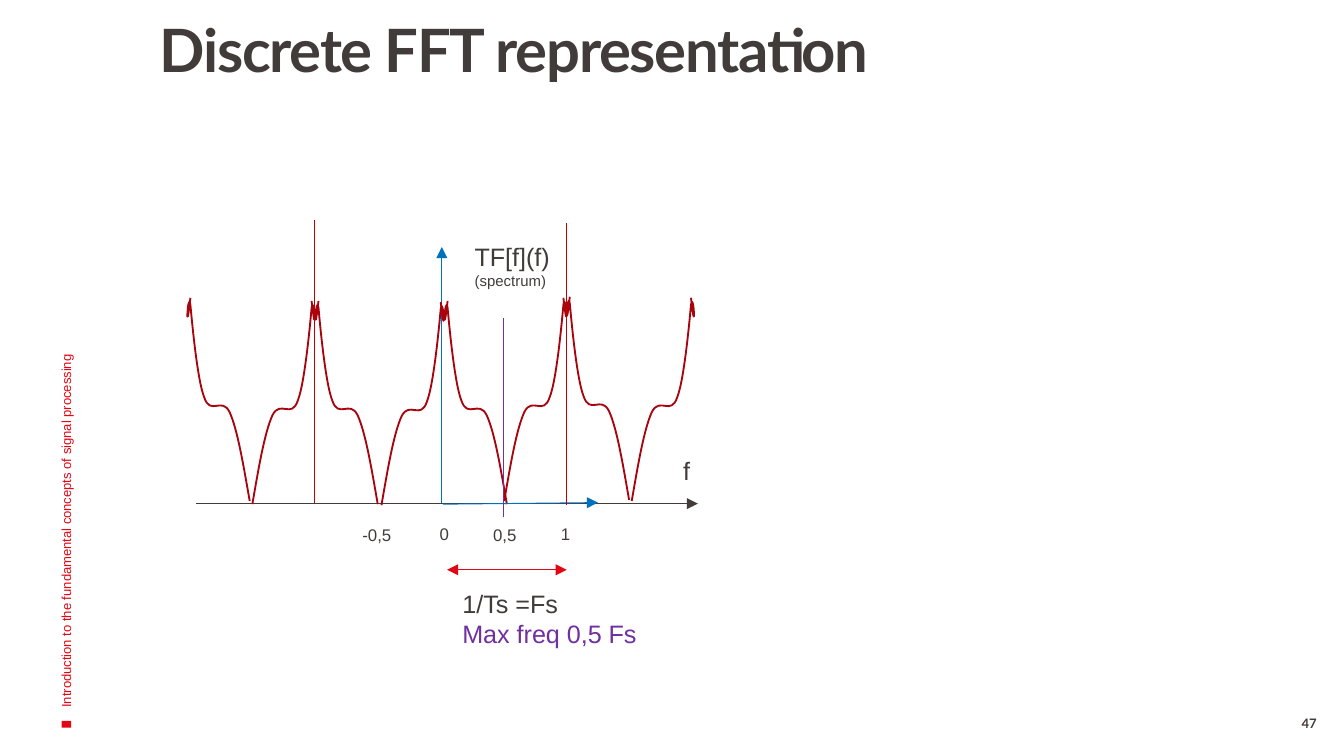
"""Build the slide on the periodic spectrum of the discrete FFT."""
from dataclasses import dataclass

from lxml.etree import SubElement
from pptx import Presentation
from pptx.dml.color import RGBColor as Rgb
from pptx.enum.shapes import MSO_CONNECTOR as Link, MSO_SHAPE as Preset
from pptx.enum.text import MSO_ANCHOR as Anchor, PP_ALIGN as Align
from pptx.oxml.ns import qn
from pptx.util import Cm, Pt


@dataclass(frozen=True)
class Theme:
    ink: str = "413C3A"
    brand: str = "E30613"
    blue: str = "0070C0"
    purple: str = "7030A0"
    period: str = "C00000"
    spectrum: str = "A8040E"
    heading: str = "Lato"
    body: str = "Arial"
    title: float = 32
    label: float = 13.5
    tick: float = 9
    caption: float = 8
    footer: float = 7
    thin: float = 0.5
    curve: float = 1


class SlideWriter:
    def __init__(self, slide, theme):
        self.shapes = slide.shapes
        self.theme = theme

    def text(self, box, lines, rotation=0, insets=(0.25, 0.13, 0.25, 0.13),
             anchor=Anchor.TOP, spacing=None, align=Align.LEFT, tracking=None):
        holder = self.shapes.add_textbox(*map(Cm, box))
        holder.rotation = rotation
        frame = holder.text_frame
        left, top, right, bottom = map(Cm, insets)
        frame_format = {"word_wrap": True, "vertical_anchor": anchor,
                        "margin_left": left, "margin_top": top,
                        "margin_right": right, "margin_bottom": bottom}
        for name, value in frame_format.items():
            setattr(frame, name, value)
        for index, (words, size, color, font) in enumerate(lines):
            paragraph = frame.add_paragraph() if index else frame.paragraphs[0]
            paragraph.alignment = align
            paragraph.line_spacing = spacing
            run = paragraph.add_run()
            run.text = words
            font_format = {"name": font, "size": Pt(size),
                           "bold": font == self.theme.heading}
            for name, value in font_format.items():
                setattr(run.font, name, value)
            run.font.color.rgb = Rgb.from_string(color)
            if tracking is not None:
                run._r.get_or_add_rPr().set("spc", str(tracking))

    def line(self, start, end, color, arrows=()):
        connector = self.shapes.add_connector(
            Link.STRAIGHT, *map(Cm, (*start, *end)))
        connector.line.color.rgb = Rgb.from_string(color)
        connector.line.width = Pt(self.theme.thin)
        outline = connector.line._get_or_add_ln()
        for arrow in arrows:
            SubElement(outline, qn(f"a:{arrow}"), type="triangle")
        SubElement(connector._element.spPr, qn("a:effectLst"))

    def curve(self, controls, color):
        corners = [(Cm(x), Cm(y)) for x, y in controls]
        builder = self.shapes.build_freeform(*corners[0])
        builder.add_line_segments(corners[1:], close=False)
        wave = builder.convert_to_shape()
        outline = wave._element.find(f".//{qn('a:path')}")
        segments = outline.findall(qn("a:lnTo"))
        for first in range(0, len(segments), 3):
            bezier = SubElement(outline, qn("a:cubicBezTo"))
            for segment in segments[first:first + 3]:
                bezier.append(segment[0])
                outline.remove(segment)
        wave.shadow.inherit = False
        wave.fill.background()
        wave.line.color.rgb = Rgb.from_string(color)
        wave.line.width = Pt(self.theme.curve)

    def marker(self, box, color, rotation):
        square = self.shapes.add_shape(Preset.RECTANGLE, *map(Cm, box))
        square.rotation = rotation
        square.shadow.inherit = False
        square.fill.solid()
        square.fill.fore_color.rgb = Rgb.from_string(color)
        square.line.fill.background()


HALF_PERIOD = [
    (0, 0), (0.12, -0.69), (0.23, -1.35), (0.38, -1.68),
    (0.53, -1.98), (0.74, -1.6), (0.86, -1.96),
    (0.99, -2.29), (1.09, -3.38), (1.12, -3.71),
    (1.17, -4.01), (1.22, -2.95), (1.12, -3.84)]


def main():
    deck = Presentation()
    deck.slide_width, deck.slide_height = Cm(25.4), Cm(14.29)
    theme = Theme()
    writer = SlideWriter(deck.slides.add_slide(deck.slide_layouts[6]), theme)

    writer.marker((1.19, 13.6, 0.13, 0.18), theme.brand, 270)
    writer.text((2.51, 0.51, 20.98, 1.63),
                [("Discrete FFT representation", theme.title, theme.ink,
                  theme.heading)],
                insets=(0.51, 0, 0.2, 0.13), spacing=0.8, tracking=-70)
    writer.text((24.03, 13.52, 1.42, 0.46),
                [("47", theme.footer, theme.ink, theme.heading)],
                insets=(0.25, 0, 0.25, 0), align=Align.CENTER)
    writer.text((-3.39, 7.72, 9.27, 2.54),
                [("Introduction to the fundamental concepts of signal processing",
                  theme.footer, theme.brand, theme.body)],
                rotation=270, anchor=Anchor.MIDDLE)

    one_end, both_ends = ("tailEnd",), ("headEnd", "tailEnd")
    writer.line((8.35, 9.52), (8.35, 4.67), theme.blue, one_end)
    writer.line((3.71, 9.52), (13.19, 9.52), theme.ink, one_end)

    feet = [(7.21, 9.55, 1), (9.58, 9.53, -1), (9.53, 9.47, 1),
            (11.89, 9.45, -1), (4.77, 9.53, 1), (7.14, 9.53, -1),
            (4.72, 9.47, -1), (11.94, 9.47, 1)]
    for foot_x, foot_y, direction in feet:
        writer.curve([(foot_x + direction * dx, foot_y + dy)
                      for dx, dy in HALF_PERIOD], theme.spectrum)

    writer.line((8.37, 9.53), (11.3, 9.5), theme.blue, one_end)
    writer.line((10.7, 9.54), (10.7, 4.22), theme.period)
    writer.line((9.52, 9.78), (9.52, 6.02), theme.purple)
    writer.line((5.94, 9.5), (5.94, 4.16), theme.period)
    writer.line((8.45, 10.77), (10.71, 10.77), theme.brand, both_ends)

    for left, top, frequency in [(6.6, 9.78, "-0,5"), (8.06, 9.77, "0"),
                                 (9.07, 9.79, "0,5"), (10.35, 9.77, "1")]:
        writer.text((left, top, 4.75, 0.64),
                    [(frequency, theme.tick, theme.ink, theme.body)])

    writer.text((12.66, 8.48, 0.48, 0.84),
                [("f", theme.label, theme.ink, theme.body)],
                insets=(0.25, 0.13, 0, 0.13))
    writer.text((8.72, 4.43, 4.19, 1.17),
                [("TF[f](f)", theme.label, theme.ink, theme.body),
                 ("(spectrum)", theme.caption, theme.ink, theme.body)])
    writer.text((8.49, 10.99, 4.32, 1.42),
                [("1/Ts =Fs", theme.label, theme.ink, theme.body),
                 ("Max freq 0,5 Fs", theme.label, theme.purple, theme.body)])

    deck.save("out.pptx")


if __name__ == "__main__":
    main()
